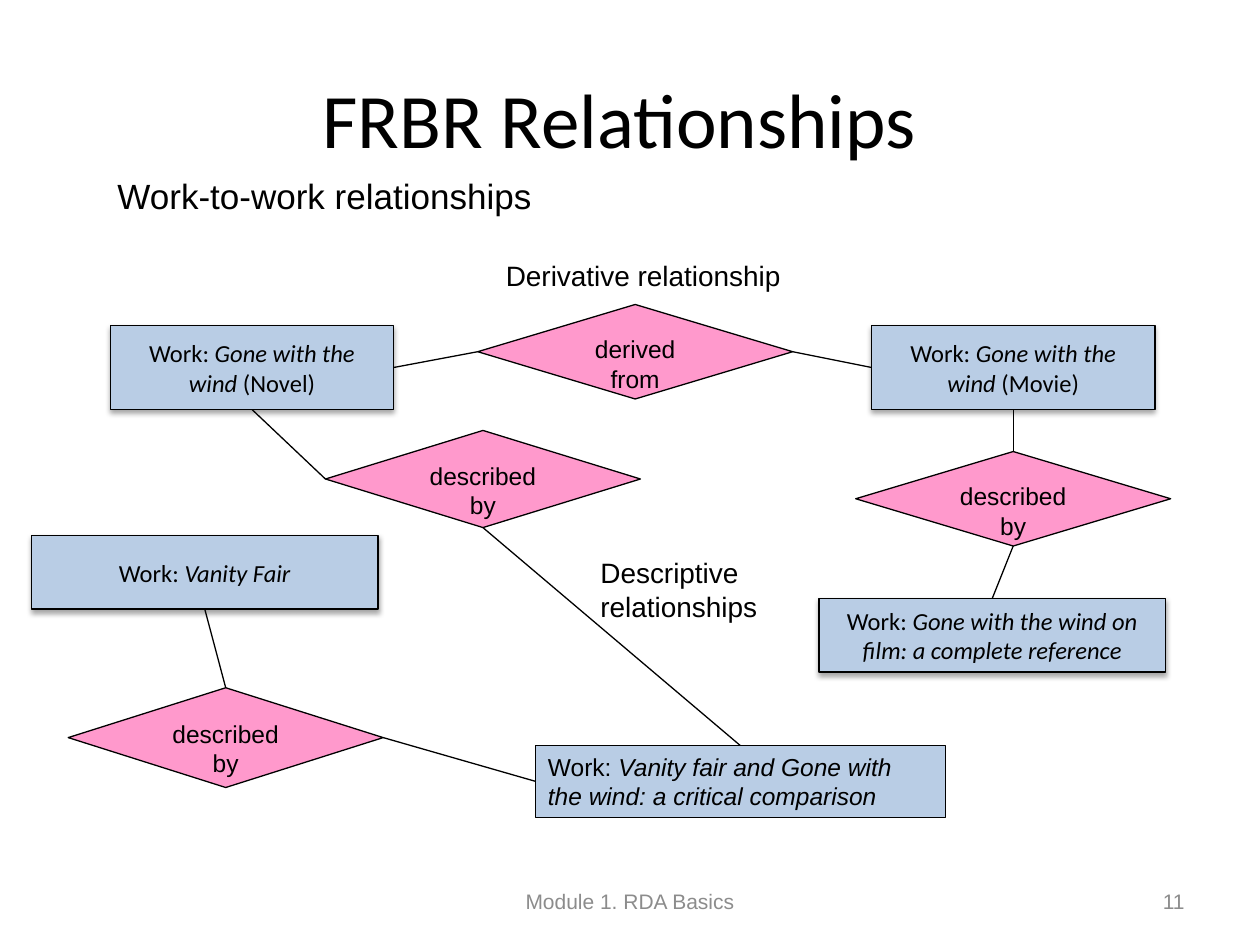
from dataclasses import dataclass

import pptx
import pptx.dml.color
import pptx.enum.shapes
import pptx.enum.text
import pptx.oxml
import pptx.oxml.ns
import pptx.util
from lxml import etree

Pt = pptx.util.Pt
Align = pptx.enum.text.PP_ALIGN
Anchor = pptx.enum.text.MSO_ANCHOR
Shape = pptx.enum.shapes.MSO_SHAPE
TOP, LEFT, BOTTOM, RIGHT = range(4)


@dataclass(frozen=True)
class Theme:
    """Colours, fonts and sizes of the slide."""
    ink: str = "000000"
    muted: str = "8C8C8C"
    work: str = "B9CDE5"
    relation: str = "FF99CC"
    heading_font: str = "Calibri"
    label_font: str = "Arial"
    title: int = 44
    subtitle: int = 20
    label: int = 16
    node: int = 14
    footer: int = 12
    outline: float = 0.75


THEME = Theme()


def rgb(value):
    """Return a colour object for a hex string."""
    return pptx.dml.color.RGBColor.from_string(value)


def write(shape, runs, size, font, align=Align.LEFT, anchor=Anchor.TOP, color=THEME.ink):
    """Fill a shape with one paragraph of (text, italic) runs."""
    frame = shape.text_frame
    frame.word_wrap = True
    frame.vertical_anchor = anchor
    paragraph = frame.paragraphs[0]
    paragraph.alignment = align
    paragraph.font.size = Pt(size)
    paragraph.font.name = font
    paragraph.font.color.rgb = rgb(color)
    for text, italic in runs:
        run = paragraph.add_run()
        run.text = text
        if italic:
            run.font.italic = True


def add_text(slide, box, text, size, font=THEME.label_font, **style):
    """Add a plain text box."""
    write(slide.shapes.add_textbox(*map(Pt, box)), [(text, False)], size, font, **style)


def add_node(slide, kind, box, fill, outline=THEME.outline):
    """Add an outlined, filled diagram shape."""
    node = slide.shapes.add_shape(kind, *map(Pt, box))
    node.fill.solid()
    node.fill.fore_color.rgb = rgb(fill)
    node.line.color.rgb = rgb(THEME.ink)
    node.line.width = Pt(outline)
    node.shadow.inherit = False
    return node


def add_shadow(node):
    """Give a node a soft shadow that falls straight down."""
    effects = node._element.spPr.find(pptx.oxml.ns.qn("a:effectLst"))
    effects.append(pptx.oxml.parse_xml(
        f'<a:outerShdw {pptx.oxml.ns.nsdecls("a")} blurRad="{Pt(3.1)}" dist="{Pt(1.8)}" '
        f'dir="5400000" rotWithShape="0"><a:srgbClr val="{THEME.ink}">'
        '<a:alpha val="35000"/></a:srgbClr></a:outerShdw>'))


def add_work(slide, box, title, kind=""):
    """Add a shadowed box that names a work."""
    work = add_node(slide, Shape.RECTANGLE, box, THEME.work)
    add_shadow(work)
    runs = [("Work: ", False), (title, True)]
    if kind:
        runs.append((f" ({kind})", False))
    write(work, runs, THEME.node, THEME.heading_font, Align.CENTER, Anchor.MIDDLE)
    return work


def add_comparison(slide, box, title):
    """Add the flat, left-aligned box of the comparative work."""
    work = add_node(slide, Shape.RECTANGLE, box, THEME.work, 0.25)
    write(work, [("Work: ", False), (title, True)], THEME.node, THEME.label_font)
    return work


def add_relation(slide, box, text):
    """Add a diamond that names a relationship."""
    relation = add_node(slide, Shape.FLOWCHART_DECISION, box, THEME.relation)
    write(relation, [(text, False)], THEME.node, THEME.label_font, Align.CENTER)
    return relation


def join(slide, start, start_side, end, end_side):
    """Join the sides of two nodes with a straight line."""
    link = slide.shapes.add_connector(pptx.enum.shapes.MSO_CONNECTOR.STRAIGHT, 0, 0, 0, 0)
    link.begin_connect(start, start_side)
    link.end_connect(end, end_side)
    link.line.color.rgb = rgb(THEME.ink)
    link.line.width = Pt(THEME.outline)
    etree.SubElement(link._element.spPr, pptx.oxml.ns.qn("a:effectLst"))


def add_diagram(slide):
    """Draw the works, their relationships and the links between them."""
    novel = add_work(slide, (63, 186, 162, 48), "Gone with the wind", "Novel")
    movie = add_work(slide, (498, 186, 162, 48), "Gone with the wind", "Movie")
    reference = add_work(slide, (468, 342, 198, 42),
                         "Gone with the wind on film: a complete reference")
    vanity_fair = add_work(slide, (18, 306, 198, 42), "Vanity Fair")
    comparison = add_comparison(slide, (306, 426, 234, 41),
                                "Vanity fair and Gone with the wind: a critical comparison")

    derived = add_relation(slide, (273, 174, 180, 54), "derived from")
    movie_described = add_relation(slide, (489, 258, 180, 54), "described by")
    novel_described = add_relation(slide, (186, 246, 180, 55.5), "described by")
    vanity_described = add_relation(slide, (39, 393, 180, 57), "described by")

    for link in (
        (derived, RIGHT, movie, LEFT),
        (novel, RIGHT, derived, LEFT),
        (novel, BOTTOM, novel_described, LEFT),
        (novel_described, BOTTOM, comparison, TOP),
        (vanity_described, TOP, vanity_fair, BOTTOM),
        (vanity_described, RIGHT, comparison, LEFT),
        (movie, BOTTOM, movie_described, TOP),
        (movie_described, BOTTOM, reference, TOP),
    ):
        join(slide, *link)


def main():
    """Build and save the slide."""
    deck = pptx.Presentation()
    deck.slide_width, deck.slide_height = Pt(720), Pt(540)
    slide = deck.slides.add_slide(deck.slide_layouts[6])

    add_text(slide, (30, 22, 648, 90), "FRBR Relationships", THEME.title,
             THEME.heading_font, align=Align.CENTER, anchor=Anchor.MIDDLE)
    add_text(slide, (60, 96, 264, 32), "Work-to-work relationships", THEME.subtitle)
    add_text(slide, (282, 144, 189, 27), "Derivative relationship", THEME.label)
    add_text(slide, (336, 314, 126, 46), "Descriptive relationships", THEME.label)
    add_diagram(slide)
    footer = {"anchor": Anchor.MIDDLE, "color": THEME.muted}
    add_text(slide, (246, 500.5, 228, 29), "Module 1. RDA Basics", THEME.footer,
             align=Align.CENTER, **footer)
    add_text(slide, (516, 500.5, 168, 29), "11", THEME.footer, align=Align.RIGHT, **footer)

    deck.save("out.pptx")


if __name__ == "__main__":
    main()
